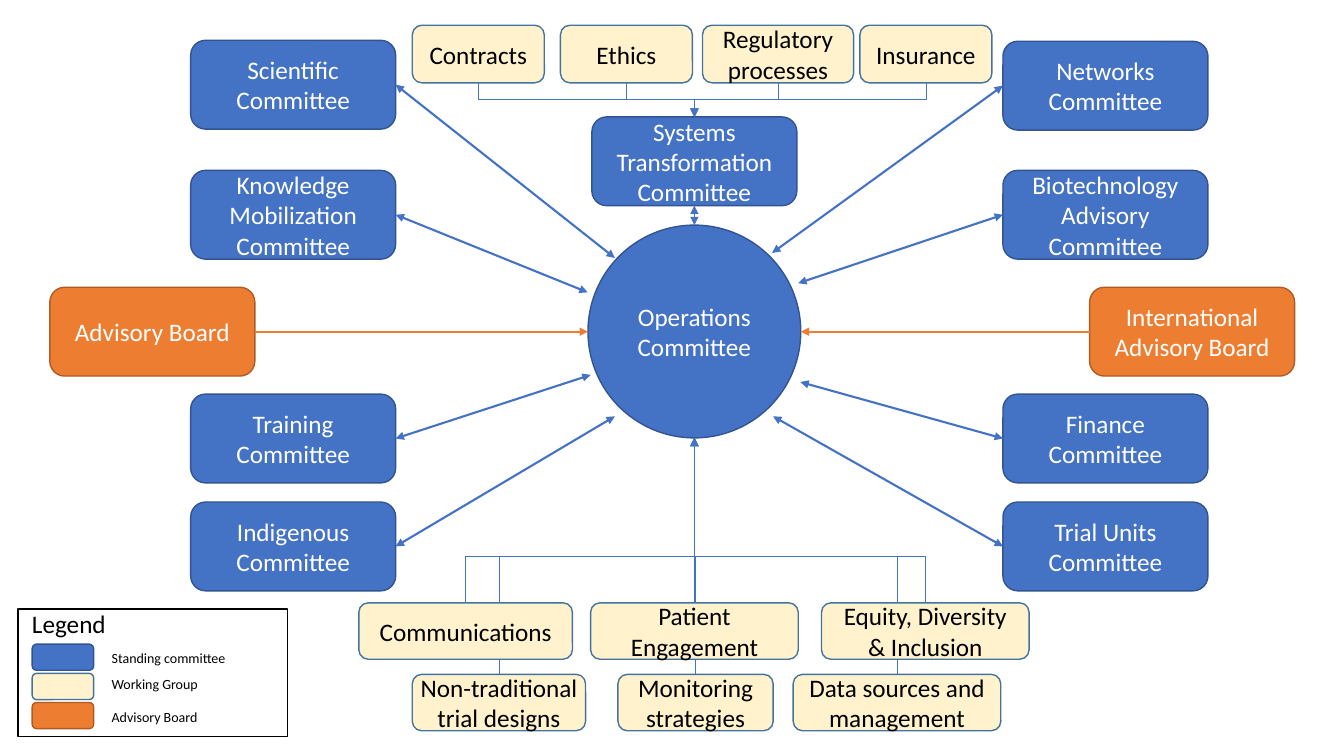
from lxml.etree import SubElement
from pptx import Presentation
from pptx.dml.color import RGBColor
from pptx.enum.shapes import MSO_CONNECTOR, MSO_SHAPE
from pptx.enum.text import MSO_ANCHOR, MSO_AUTO_SIZE, PP_ALIGN
from pptx.oxml.ns import qn
from pptx.util import Pt

COLORS = {
    "blue": "4472C4", "blue edge": "325491",
    "orange": "ED7D31", "orange edge": "AF5C24",
    "cream": "FFF2CC", "cream edge": "43739E",
    "white": "FFFFFF", "black": "000000",
}
# kind: fill, edge, text colour
KINDS = {
    "committee": ("blue", "blue edge", "white"),
    "group": ("cream", "cream edge", "black"),
    "board": ("orange", "orange edge", "white"),
    "legend": ("white", "black", "black"),
}
BOX_SIZE = (146.4, 63.4)
LEFT, RIGHT = 136.2, 716.4
ROUND = MSO_SHAPE.ROUNDED_RECTANGLE
TOP_SITE, BOTTOM_SITE, CIRCLE_BOTTOM_SITE = 0, 2, 4

# name, left, top, arrow end at the circle
COMMITTEES = [
    ("Scientific Committee", LEFT, 28.8, (439.2, 184.3)),
    ("Knowledge Mobilization Committee", LEFT, 121.7, (419.8, 208.8)),
    ("Training Committee", LEFT, 281.5, (421.9, 267.8)),
    ("Indigenous Committee", LEFT, 358.6, (439.2, 297.4)),
    ("Networks Committee", RIGHT, 29.5, (551.5, 180.7)),
    ("Biotechnology Advisory Committee", RIGHT, 121.7, (570.2, 202.3)),
    ("Finance Committee", RIGHT, 281.5, (571.7, 272.9)),
    ("Trial Units Committee", RIGHT, 358.6, (552.2, 297.4)),
]
BOARDS = [
    ("Advisory Board", 35.6, 205.2, (420, 236.9)),
    ("International Advisory Board", 778.3, 205.2, (572, 236.9)),
]
# name, left, width
SYSTEMS_GROUPS = [
    ("Contracts", 294.5, 94.3),
    ("Ethics", 400.3, 94.3),
    ("Regulatory processes", 501.8, 108),
    ("Insurance", 614.2, 94.3),
]
LOWER_GROUPS = [
    ("Non-traditional trial designs", 294.5, 123.8),
    ("Monitoring strategies", 441.4, 110.9),
    ("Data sources and management", 566.6, 148.3),
]
UPPER_GROUPS = [
    ("Communications", 256.3, 152.6),
    ("Patient Engagement", 421.9, 148.3),
    ("Equity, Diversity & Inclusion", 586.8, 148.3),
]
# kind, label, swatch top, label top
LEGEND = [
    ("committee", "Standing committee", 460.1, 460.1),
    ("group", "Working Group", 481, 478.8),
    ("board", "Advisory Board", 501.8, 502.6),
]


def color(name):
    return RGBColor.from_string(COLORS[name])


def apply(target, values):
    for name, value in values.items():
        setattr(target, name, value)


def site(shape, below):
    """Middle of the top or bottom edge, in points."""
    x = shape.left.pt + shape.width.pt / 2
    return x, shape.top.pt + (shape.height.pt if below else 0)


class Chart:
    def __init__(self, slide, font="Calibri", size=18):
        self.slide, self.font, self.size = slide, font, size

    def add_text(self, frame, text, text_color, align, size=None):
        paragraph = frame.paragraphs[0]
        paragraph.alignment = align
        run = paragraph.add_run()
        run.text = text
        apply(run.font, {"name": self.font, "size": Pt(size or self.size)})
        run.font.color.rgb = color(text_color)

    def box(self, kind, text, left, top, width, height, form=ROUND, margin=None):
        fill, edge, text_color = KINDS[kind]
        shape = self.slide.shapes.add_shape(
            form, Pt(left), Pt(top), Pt(width), Pt(height))
        shape.shadow.inherit = False
        shape.fill.solid()
        shape.fill.fore_color.rgb = color(fill)
        shape.line.color.rgb = color(edge)
        shape.line.width = Pt(1)
        frame = shape.text_frame
        apply(frame, {"word_wrap": True, "vertical_anchor": MSO_ANCHOR.MIDDLE})
        if margin is not None:
            sides = ("left", "top", "right", "bottom")
            apply(frame, {f"margin_{side}": Pt(margin) for side in sides})
        if text:
            self.add_text(frame, text, text_color, PP_ALIGN.CENTER)
        return shape

    def label(self, text, left, top, width, height, size):
        frame = self.slide.shapes.add_textbox(
            Pt(left), Pt(top), Pt(width), Pt(height)).text_frame
        apply(frame, {"word_wrap": True, "auto_size": MSO_AUTO_SIZE.SHAPE_TO_FIT_TEXT})
        self.add_text(frame, text, "black", PP_ALIGN.LEFT, size)

    def arrow(self, start, end, line="blue", width=1.5, both=True,
              form=MSO_CONNECTOR.STRAIGHT):
        connector = self.slide.shapes.add_connector(
            form, *(Pt(value) for value in (*start, *end)))
        connector.line.color.rgb = color(line)
        connector.line.width = Pt(width)
        properties = connector._element.spPr
        outline = properties.find(qn("a:ln"))
        for tag in ("a:headEnd", "a:tailEnd") if both else ("a:tailEnd",):
            SubElement(outline, qn(tag), type="triangle")
        SubElement(properties, qn("a:effectLst"))
        return connector

    def elbow(self, source, target, bus, upward, target_site):
        """Leave source vertically, turn at height bus, enter target vertically."""
        x1, y1 = site(source, not upward)
        x2, y2 = site(target, upward)
        dx, dy = x2 - x1, y2 - y1
        turn = 1 if dx * dy < 0 else -1
        across, down = turn * dy / 2, -turn * dx / 2
        x, y = (x1 + x2) / 2, (y1 + y2) / 2
        connector = self.arrow((x - across, y - down), (x + across, y + down),
                               width=0.5, both=False, form=MSO_CONNECTOR.ELBOW)
        element = connector._element
        element.spPr.find(qn("a:xfrm")).set("rot", str(turn * 90 % 360 * 60000))
        bend = round((bus - y1) / dy * 100000)
        SubElement(element.find(".//" + qn("a:avLst")), qn("a:gd"),
                   name="adj1", fmla=f"val {bend}")
        ends = (("a:stCxn", source, TOP_SITE if upward else BOTTOM_SITE),
                ("a:endCxn", target, target_site))
        for tag, shape, index in ends:
            SubElement(element.nvCxnSpPr.cNvCxnSpPr, qn(tag),
                       id=str(shape.shape_id), idx=str(index))

    def spoke(self, kind, name, left, top, end, line, both):
        """Box with an arrow from its inner side to the circle."""
        width, height = BOX_SIZE
        self.box(kind, name, left, top, width, height)
        inner = left + width if left < end[0] else left
        self.arrow((inner, top + height / 2), end, line, both=both)

    def group_row(self, groups, top, height, target, bus, upward, target_site):
        for name, left, width in groups:
            margin = 0 if name.startswith("Non-traditional") else None
            shape = self.box("group", name, left, top, width, height, margin=margin)
            self.elbow(shape, target, bus, upward, target_site)

    def legend(self):
        self.box("legend", "", 13, 434.9, 192.2, 91.4, MSO_SHAPE.RECTANGLE)
        self.label("Legend", 15.8, 431.3, 139, 28.8, 18)
        for kind, text, swatch_top, label_top in LEGEND:
            self.box(kind, "", 23, swatch_top, 43.9, 18.7)
            self.label(text, 72.7, label_top, 124.6, 19.4, 10)


def main():
    presentation = Presentation()
    apply(presentation, {"slide_width": Pt(960), "slide_height": Pt(540)})
    chart = Chart(presentation.slides.add_slide(presentation.slide_layouts[6]))

    operations = chart.box("committee", "Operations Committee",
                           420, 160.8, 152, 152, MSO_SHAPE.OVAL)
    for committee in COMMITTEES:
        chart.spoke("committee", *committee, "blue", True)
    for board in BOARDS:
        chart.spoke("board", *board, "orange", False)

    for groups, top in ((LOWER_GROUPS, 481.7), (UPPER_GROUPS, 430.6)):
        chart.group_row(groups, top, 40.3, operations, 397.4, True, CIRCLE_BOTTOM_SITE)

    systems = chart.box("committee", "Systems Transformation Committee",
                        422.8, 83.5, *BOX_SIZE)
    chart.group_row(SYSTEMS_GROUPS, 18, 41.2, systems, 71.3, False, TOP_SITE)
    chart.arrow(site(systems, True), site(operations, False), width=0.5)

    chart.legend()
    presentation.save("out.pptx")


if __name__ == "__main__":
    main()
